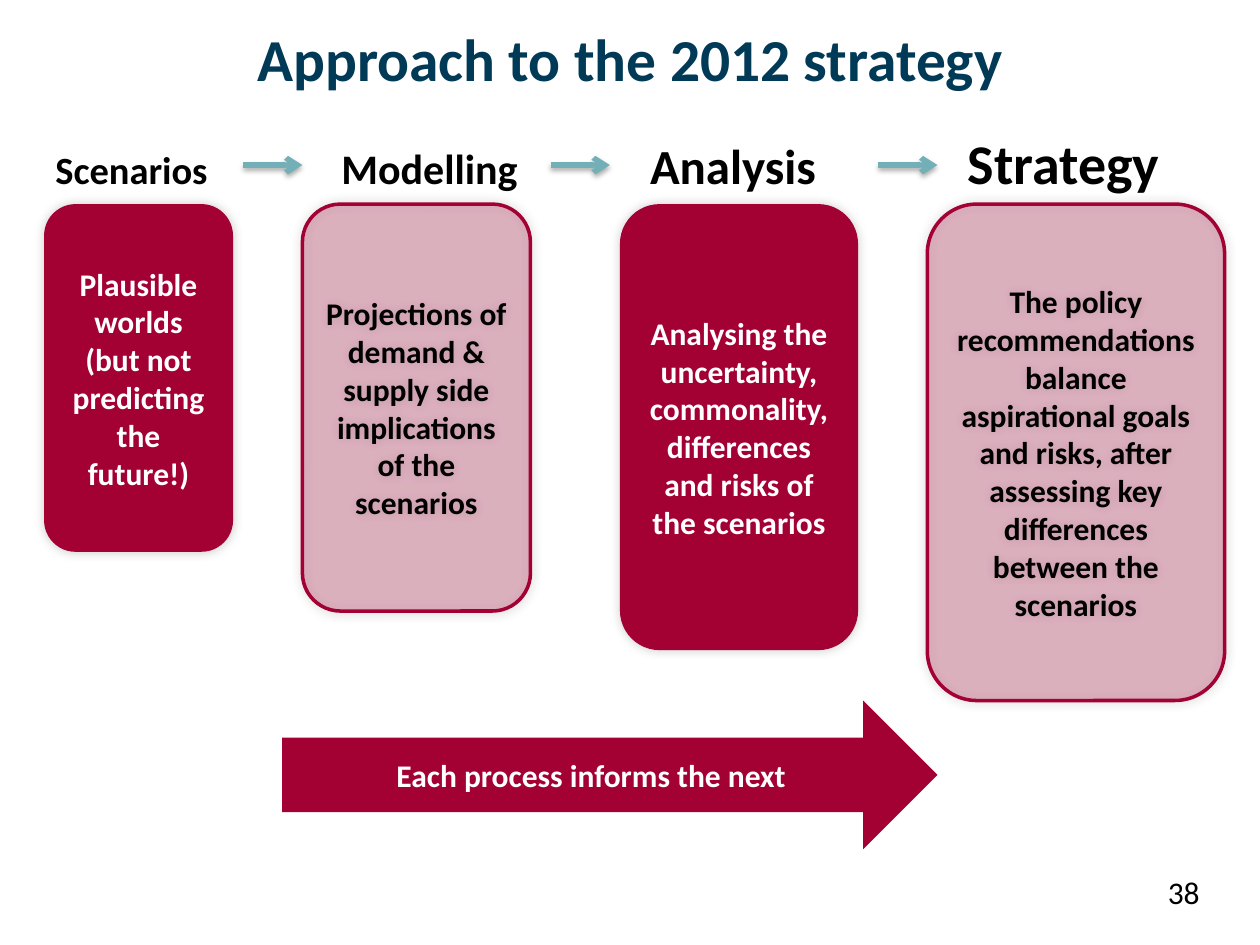
from lxml import etree
from pptx import Presentation
from pptx.dml.color import RGBColor
from pptx.enum.shapes import MSO_CONNECTOR, MSO_SHAPE
from pptx.enum.text import MSO_ANCHOR, PP_ALIGN
from pptx.oxml.ns import qn
from pptx.util import Inches, Pt

CRIMSON = RGBColor(0xA3, 0x01, 0x34)
NAVY = RGBColor(0x00, 0x3A, 0x57)
TEAL = RGBColor(0x73, 0xAF, 0xB6)
BLACK = RGBColor(0, 0, 0)
WHITE = RGBColor(0xFF, 0xFF, 0xFF)
CENTER, LEFT = PP_ALIGN.CENTER, PP_ALIGN.LEFT
MIDDLE = MSO_ANCHOR.MIDDLE
ROUNDED, RIGHT_ARROW = MSO_SHAPE.ROUNDED_RECTANGLE, MSO_SHAPE.RIGHT_ARROW
STRAIGHT = MSO_CONNECTOR.STRAIGHT
FONT = "Calibri"

CARD_TOP = 1.62
CARDS = [
    (0.35, 1.5, 2.76, False, "Plausible worlds (but not predicting the future!)"),
    (2.4, 1.81, 3.23, True,
     "Projections of demand & supply side implications of the scenarios"),
    (4.92, 1.89, 3.54, False,
     "Analysing the uncertainty, commonality, differences and risks of the scenarios"),
    (7.36, 2.36, 3.94, True,
     "The policy recommendations balance aspirational goals and risks, "
     "after assessing key differences between the scenarios"),
]
HEADINGS = [("Scenarios", 22), ("Modelling", 24), ("Analysis", 28), ("Strategy", 32)]
HEADING_TABS = [2.27, 4.72, 7.24]
STEP_ARROWS = [1.93, 4.37, 6.97]


def add_child(parent, tag, **attributes):
    return etree.SubElement(parent, qn(tag), attributes)


def set_font(r, size, color, bold=True):
    r.font.name = FONT
    r.font.size = Pt(size)
    r.font.bold = bold
    r.font.color.rgb = color


def set_text(s, text, size, color, bold=True, align=CENTER):
    tf = s.text_frame
    tf.word_wrap = True
    tf.text = text
    p = tf.paragraphs[0]
    p.alignment = align
    set_font(p.runs[0], size, color, bold)


def add_shadow(s, opacity, blur, distance, angle):
    effects = add_child(s._element.spPr, "a:effectLst")
    shadow = add_child(effects, "a:outerShdw", blurRad=str(Pt(blur)),
                       dist=str(Pt(distance)), dir=str(angle * 60000),
                       rotWithShape="0")
    color = add_child(shadow, "a:srgbClr", val=str(BLACK))
    add_child(color, "a:alpha", val=str(opacity * 1000))


def add_label(slide, left, top, width, height, *text_format):
    s = slide.shapes.add_textbox(Inches(left), Inches(top), Inches(width), Inches(height))
    set_text(s, *text_format)


def add_block(slide, kind, left, top, width, height, text, color):
    s = slide.shapes.add_shape(kind, Inches(left), Inches(top),
                               Inches(width), Inches(height))
    s.fill.solid()
    s.fill.fore_color.rgb = CRIMSON
    s.line.fill.background()
    s.text_frame.vertical_anchor = MIDDLE
    set_text(s, text, 18, color)
    return s


def add_card(slide, left, width, height, tinted, text):
    s = add_block(slide, ROUNDED, left, CARD_TOP, width, height, text,
                  BLACK if tinted else WHITE)
    if tinted:
        fill_color = s._element.spPr.find(qn("a:solidFill"))[0]
        add_child(fill_color, "a:alpha", val="27000")
        s.line.color.rgb = CRIMSON
        s.line.width = Pt(2)
    add_shadow(s, 20, 6, 0, 225)


def add_headings(slide):
    s = slide.shapes.add_textbox(Inches(0.28), Inches(0.97), Inches(9.57), Inches(0.64))
    tf = s.text_frame
    tf.word_wrap = True
    tf.margin_left = Inches(0.16)
    p = tf.paragraphs[0]
    tabs = add_child(p._p.get_or_add_pPr(), "a:tabLst")
    for position in HEADING_TABS:
        add_child(tabs, "a:tab", pos=str(Inches(position)), algn="l")
    for i, (text, size) in enumerate(HEADINGS):
        r = p.add_run()
        r.text = "\t" + text if i else text
        set_font(r, size, BLACK)


def add_step_arrow(slide, left):
    y = Inches(1.31)
    s = slide.shapes.add_connector(STRAIGHT, Inches(left), y, Inches(left + 0.47), y)
    s.line.color.rgb = TEAL
    s.line.width = Pt(3)
    add_child(s.line._get_or_add_ln(), "a:tailEnd", type="arrow")
    add_shadow(s, 35, 3.1, 1.8, 90)


def main():
    prs = Presentation()
    prs.slide_width, prs.slide_height = Inches(10), Inches(7.5)
    slide = prs.slides.add_slide(prs.slide_layouts[6])
    add_label(slide, 0, 0.13, 10, 0.67, "Approach to the 2012 strategy", 34, NAVY)
    add_headings(slide)
    for card in CARDS:
        add_card(slide, *card)
    for left in STEP_ARROWS:
        add_step_arrow(slide, left)
    banner = add_block(slide, RIGHT_ARROW, 2.24, 5.56, 5.2, 1.18,
                       "Each process informs the next", WHITE)
    banner.shadow.inherit = False
    add_label(slide, 9.17, 6.88, 0.83, 0.62, "38", 18, BLACK, False, LEFT)
    prs.save("out.pptx")


if __name__ == "__main__":
    main()
